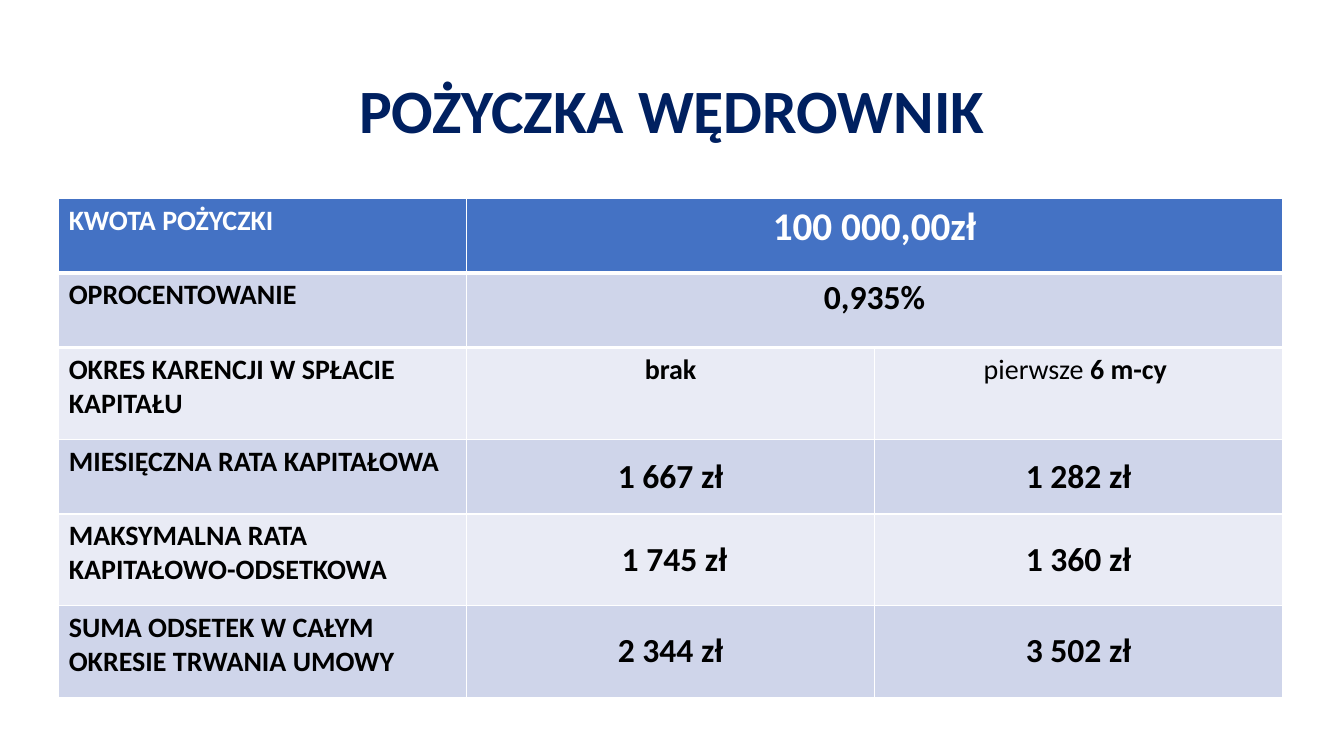
from lxml.etree import SubElement
from pptx import Presentation
from pptx.dml.color import RGBColor
from pptx.enum.text import MSO_ANCHOR as Anchor, PP_ALIGN as Align
from pptx.oxml.ns import qn
from pptx.util import Cm, Pt

NAVY, BLUE, WHITE, BLACK = "002060", "4472C4", "FFFFFF", "000000"
BANDS = ("CFD5EA", "E9EBF5")
LABEL, RATE, AMOUNT = 20, 24, 28

# label, row height in cm, value size, value anchor, values as (text, bold) runs
LOAN_TERMS = [
    ("KWOTA POŻYCZKI", 1.88, AMOUNT, Anchor.TOP, [[("100 000,00zł", True)]]),
    ("OPROCENTOWANIE", 1.88, RATE, Anchor.TOP, [[("0,935%", True)]]),
    ("OKRES KARENCJI W SPŁACIE KAPITAŁU", 2.31, LABEL, Anchor.TOP,
     [[("brak", True)], [("pierwsze ", False), ("6 m-cy ", True)]]),
    ("MIESIĘCZNA RATA KAPITAŁOWA", 1.88, RATE, Anchor.MIDDLE,
     [[("1 667 zł", True)], [("1 282 zł", True)]]),
    ("MAKSYMALNA RATA KAPITAŁOWO-ODSETKOWA", 2.31, RATE, Anchor.MIDDLE,
     [[(" 1 745 zł", True)], [("1 360 zł", True)]]),
    ("SUMA ODSETEK W CAŁYM OKRESIE TRWANIA UMOWY", 2.31, RATE, Anchor.MIDDLE,
     [[("2 344 zł", True)], [("3 502 zł", True)]]),
]


def rgb(code):
    return RGBColor.from_string(code)


def write(paragraph, runs, size, color, align):
    """Fill the paragraph with (text, bold) runs."""
    paragraph.alignment = align
    for text, bold in runs:
        run = paragraph.add_run()
        run.text = text
        formats = {"name": "Calibri", "size": Pt(size), "bold": bold}
        for key, value in formats.items():
            setattr(run.font, key, value)
        run.font.color.rgb = rgb(color)


def add_title(slide, text, left, top, width, height):
    frame = slide.shapes.add_textbox(left, top, width, height).text_frame
    frame.word_wrap = True
    frame.vertical_anchor = Anchor.MIDDLE
    heading = frame.paragraphs[0]
    heading.line_spacing = 0.9
    write(heading, [(text, True)], 44, NAVY, Align.CENTER)


def add_border(cell, side, points):
    """Draw one white cell edge; call before the cell gets its fill."""
    properties = cell._tc.get_or_add_tcPr()
    edge = SubElement(properties, qn(f"a:{side}"), w=str(Pt(points)))
    SubElement(SubElement(edge, qn("a:solidFill")), qn("a:srgbClr"), val=WHITE)


def fill_cell(cell, runs, size, color, fill, align, anchor):
    cell.fill.solid()
    cell.fill.fore_color.rgb = rgb(fill)
    cell.vertical_anchor = anchor
    write(cell.text_frame.paragraphs[0], runs, size, color, align)


def add_loan_table(slide, terms, left, top, width):
    """Place the terms; a single value spans both variant columns."""
    height = Cm(sum(term[1] for term in terms))
    table = slide.shapes.add_table(len(terms), 3, left, top, width, height).table
    for column in table.columns:
        column.width = width // 3
    for column in range(3):
        add_border(table.cell(0, column), "lnB", 3)
        add_border(table.cell(1, column), "lnT", 3)
    for index, (label, row_height, size, anchor, values) in enumerate(terms):
        table.rows[index].height = Cm(row_height)
        is_header = index == 0
        color = WHITE if is_header else BLACK
        fill = BLUE if is_header else BANDS[(index - 1) % 2]
        fill_cell(table.cell(index, 0), [(label, True)], LABEL, color, fill,
                  Align.LEFT, Anchor.TOP)
        if len(values) == 1:
            table.cell(index, 1).merge(table.cell(index, 2))
        for column, runs in enumerate(values, start=1):
            fill_cell(table.cell(index, column), runs, size, color, fill,
                      Align.CENTER, anchor)


def main():
    deck = Presentation()
    deck.slide_width, deck.slide_height = Cm(33.87), Cm(19.05)
    slide = deck.slides.add_slide(deck.slide_layouts[6])
    add_title(slide, "POŻYCZKA WĘDROWNIK", Cm(2.33), Cm(1.01), Cm(29.21), Cm(3.68))
    add_loan_table(slide, LOAN_TERMS, Cm(1.48), Cm(5), Cm(30.84))
    deck.save("out.pptx")


if __name__ == "__main__":
    main()
